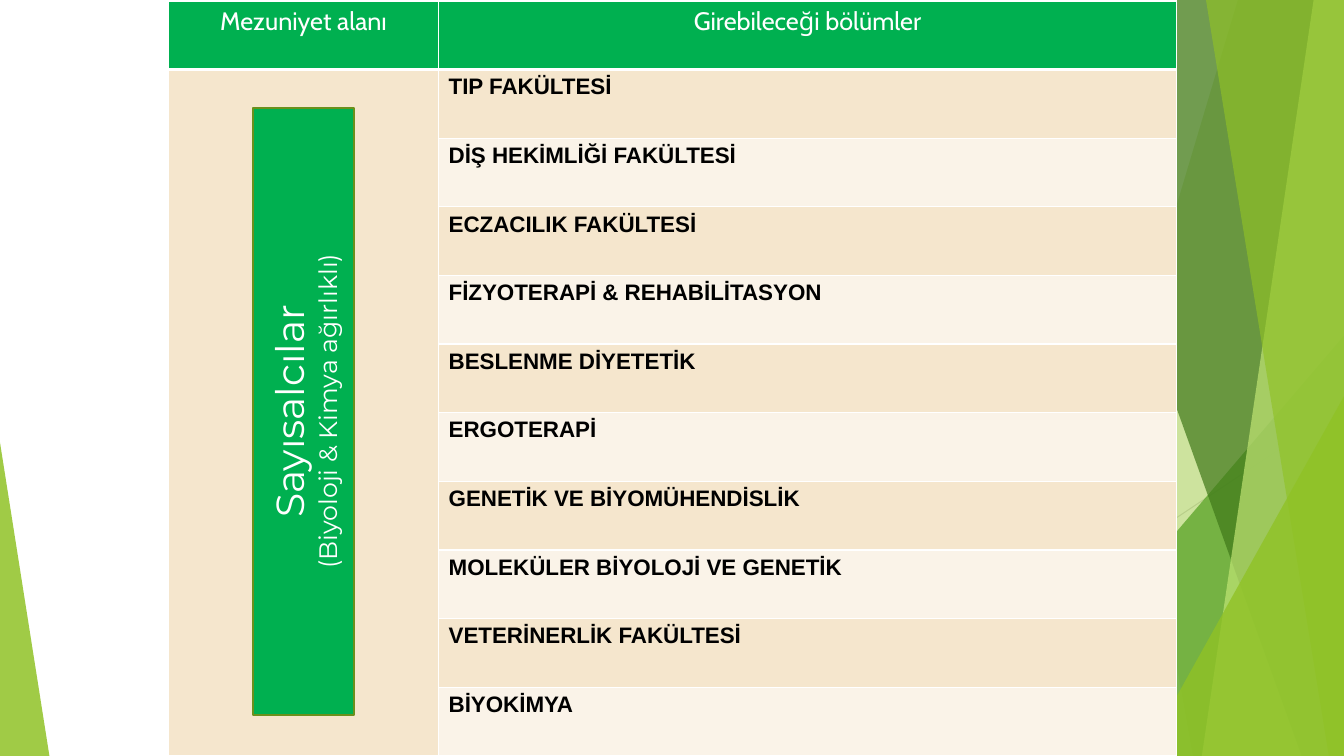
from dataclasses import dataclass

from lxml import etree
from pptx import Presentation
from pptx.dml.color import RGBColor
from pptx.enum.shapes import MSO_CONNECTOR, MSO_SHAPE
from pptx.enum.text import MSO_ANCHOR, PP_ALIGN
from pptx.oxml.ns import qn
from pptx.util import Inches, Pt

STRAIGHT = MSO_CONNECTOR.STRAIGHT
TRIANGLE = MSO_SHAPE.ISOSCELES_TRIANGLE
RECTANGLE = MSO_SHAPE.RECTANGLE
MIDDLE = MSO_ANCHOR.MIDDLE
LEFT, CENTER = PP_ALIGN.LEFT, PP_ALIGN.CENTER

WIDTH, HEIGHT = 13.33, 7.5
TOP = -0.01

COLORS = {
    "white": "FFFFFF", "black": "000000", "green": "00B050", "olive": "6B901C",
    "sand": "F5E6CD", "cream": "FAF3E8", "silver": "BFBFBF", "mist": "D9D9D9",
    "lime": "90C226", "leaf": "54A021", "forest": "3F7819", "pale": "C0E474",
}
HEADER_FONT = {"name": "Cabin", "size": Pt(18), "color": "white"}
DEPARTMENT_FONT = {"name": "Arial", "size": Pt(16), "bold": True, "color": "black"}
TITLE_FONT = {"name": "Montserrat", "size": Pt(28), "color": "white"}
SUBTITLE_FONT = {**TITLE_FONT, "size": Pt(18)}

HEADERS = ["Mezuniyet alanı", "Girebileceği bölümler"]
DEPARTMENTS = [
    "TIP FAKÜLTESİ",
    "DİŞ HEKİMLİĞİ FAKÜLTESİ",
    "ECZACILIK FAKÜLTESİ",
    "FİZYOTERAPİ & REHABİLİTASYON",
    "BESLENME DİYETETİK",
    "ERGOTERAPİ",
    "GENETİK VE BİYOMÜHENDİSLİK",
    "MOLEKÜLER BİYOLOJİ VE GENETİK",
    "VETERİNERLİK FAKÜLTESİ",
    "BİYOKİMYA",
]


@dataclass
class Ray:
    start: tuple[float, float]
    end: tuple[float, float]
    color: str


@dataclass
class Band:
    """A strip reaching the right slide edge, with a slanted left side."""
    top_x: float
    bottom_x: float
    color: str
    opacity: int


@dataclass
class Wedge:
    """A right triangle standing on the bottom slide edge."""
    left: float
    top: float
    width: float
    apex: float
    color: str
    opacity: int


RAYS = [
    Ray((10.25, 0), (11.58, HEIGHT), "silver"),
    Ray((WIDTH, 4.03), (8.12, HEIGHT), "mist"),
]
FACETS = [
    Band(12.28, 10.04, "lime", 30),
    Band(10.5, 11.83, "lime", 20),
    Wedge(9.77, 3.33, 3.56, 1, "leaf", 72),
    Band(10.21, 12.91, "forest", 70),
    Band(13.03, 11.92, "pale", 70),
    Band(11.96, 13.18, "lime", 65),
    Wedge(11.34, 3.93, 1.99, 1, "lime", 80),
    Wedge(0, 4.39, 0.49, 0, "lime", 85),
]


def rgb(color: str) -> RGBColor:
    return RGBColor.from_string(COLORS[color])


def paint(target, color: str) -> None:
    target.fill.solid()
    target.fill.fore_color.rgb = rgb(color)


def write(paragraph, text: str, font_format: dict, alignment) -> None:
    paragraph.alignment = alignment
    run = paragraph.add_run()
    run.text = text
    for key, value in font_format.items():
        if key == "color":
            run.font.color.rgb = rgb(value)
        else:
            setattr(run.font, key, value)


def draw_ray(slide, ray: Ray) -> None:
    points = [Inches(value) for value in ray.start + ray.end]
    line = slide.shapes.add_connector(STRAIGHT, *points)
    line.line.color.rgb = rgb(ray.color)
    line.line.width = Pt(0.75)
    etree.SubElement(line._element.spPr, qn("a:effectLst"))


def draw_facet(slide, facet: Band | Wedge) -> None:
    if isinstance(facet, Band):
        outline = [(facet.top_x, TOP), (WIDTH, TOP), (WIDTH, HEIGHT), (facet.bottom_x, HEIGHT)]
        start, *others = [(Inches(x), Inches(y)) for x, y in outline]
        builder = slide.shapes.build_freeform(*start)
        builder.add_line_segments(others, close=True)
        shape = builder.convert_to_shape()
    else:
        shape = slide.shapes.add_shape(
            TRIANGLE, Inches(facet.left), Inches(facet.top),
            Inches(facet.width), Inches(HEIGHT - facet.top))
        shape.adjustments[0] = facet.apex
    shape.shadow.inherit = False
    shape.line.fill.background()
    paint(shape, facet.color)
    tint = shape._element.spPr.find(qn("a:solidFill"))[0]
    etree.SubElement(tint, qn("a:alpha"), val=str(facet.opacity * 1000))


def add_borders(cell, bottom_points: int) -> None:
    properties = cell._tc.get_or_add_tcPr()
    for index, side in enumerate("LRTB"):
        points = bottom_points if side == "B" else 1
        border = etree.Element(qn(f"a:ln{side}"), w=str(Pt(points)))
        fill = etree.SubElement(border, qn("a:solidFill"))
        etree.SubElement(fill, qn("a:srgbClr"), val=COLORS["white"])
        properties.insert(index, border)


def draw_departments(slide) -> None:
    row_count = len(DEPARTMENTS) + 1
    table = slide.shapes.add_table(
        row_count, 2, Inches(1.67), Inches(0.01), Inches(10), Inches(7.49)).table
    for column, width in zip(table.columns, (2.68, 7.32)):
        column.width = Inches(width)

    for row in range(row_count):
        for column in range(2):
            cell = table.cell(row, column)
            if row == 0:
                paint(cell, "green")
                write(cell.text_frame.paragraphs[0], HEADERS[column], HEADER_FONT, CENTER)
            else:
                paint(cell, "sand" if column == 0 or row % 2 else "cream")
                if column == 1:
                    write(cell.text_frame.paragraphs[0], DEPARTMENTS[row - 1],
                          DEPARTMENT_FONT, LEFT)
            add_borders(cell, 3 if row == 0 else 1)
    table.cell(1, 0).merge(table.cell(row_count - 1, 0))


def draw_field_label(slide) -> None:
    label = slide.shapes.add_shape(RECTANGLE, Inches(0), Inches(3.58), Inches(6.02), Inches(1))
    label.rotation = 270
    label.shadow.inherit = False
    paint(label, "green")
    label.line.color.rgb = rgb("olive")
    label.line.width = Pt(1.5)
    frame = label.text_frame
    frame.word_wrap = True
    frame.vertical_anchor = MIDDLE
    write(frame.paragraphs[0], "Sayısalcılar", TITLE_FONT, CENTER)
    write(frame.add_paragraph(), "(Biyoloji & Kimya ağırlıklı)", SUBTITLE_FONT, CENTER)


def main() -> None:
    presentation = Presentation()
    presentation.slide_width = Inches(WIDTH)
    presentation.slide_height = Inches(HEIGHT)
    slide = presentation.slides.add_slide(presentation.slide_layouts[6])
    for ray in RAYS:
        draw_ray(slide, ray)
    for facet in FACETS:
        draw_facet(slide, facet)
    draw_departments(slide)
    draw_field_label(slide)
    presentation.save("out.pptx")


if __name__ == "__main__":
    main()
